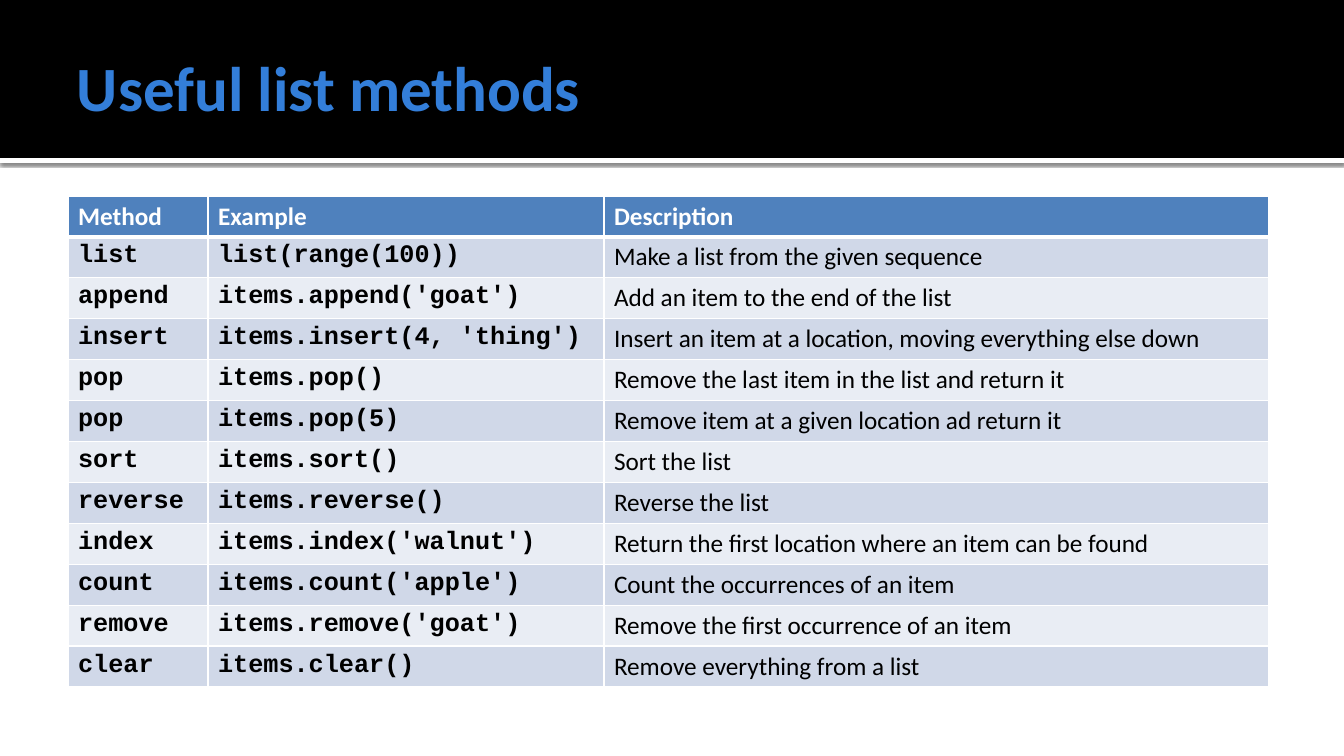
from pptx import Presentation
from pptx.dml.color import RGBColor as RGB
from pptx.enum.shapes import MSO_SHAPE as Shape
from pptx.enum.text import MSO_ANCHOR as Anchor
from pptx.oxml import parse_xml
from pptx.oxml.ns import nsdecls
from pptx.util import Pt

SCALE = 914400 / 100.8
WHITE = RGB(0xFF, 0xFF, 0xFF)
BLACK = RGB(0, 0, 0)
TITLE = RGB(0x33, 0x7E, 0xD9)
HEAD = RGB(0x4F, 0x81, 0xBD)
BANDS = RGB(0xE9, 0xED, 0xF4), RGB(0xD0, 0xD8, 0xE8)
SANS, MONO = "Calibri", "Courier New"
COLS = 140, 396, 665
ROWS = [
    ("Method", "Example", "Description"),
    ("list", "list(range(100))", "Make a list from the given sequence"),
    ("append", "items.append('goat')", "Add an item to the end of the list"),
    ("insert", "items.insert(4, 'thing')",
     "Insert an item at a location, moving everything else down"),
    ("pop", "items.pop()", "Remove the last item in the list and return it"),
    ("pop", "items.pop(5)", "Remove item at a given location ad return it"),
    ("sort", "items.sort()", "Sort the list"),
    ("reverse", "items.reverse()", "Reverse the list"),
    ("index", "items.index('walnut')",
     "Return the first location where an item can be found"),
    ("count", "items.count('apple')", "Count the occurrences of an item"),
    ("remove", "items.remove('goat')", "Remove the first occurrence of an item"),
    ("clear", "items.clear()", "Remove everything from a list"),
]


def px(n):
    """Turn pixels into EMU."""
    return round(n * SCALE)


def add_run(para, text, size, font, color, bold):
    """Add one styled run."""
    run = para.add_run()
    run.text = text
    run.font.size = Pt(size)
    run.font.name = font
    run.font.color.rgb = color
    run.font.bold = bold


def add_bar(slide, x, y, w, h, color):
    """Add a plain filled bar."""
    bar = slide.shapes.add_shape(Shape.RECTANGLE, px(x), px(y), px(w), px(h))
    bar.shadow.inherit = False
    bar.fill.solid()
    bar.fill.fore_color.rgb = color
    bar.line.fill.background()
    return bar


def add_shade(bar):
    """Give a bar a soft shadow below it."""
    bar.element.spPr.find(".//{*}effectLst").append(parse_xml(
        f'<a:outerShdw {nsdecls("a")} blurRad="{Pt(2.5)}" dist="{Pt(0.8)}" '
        f'dir="5400000" algn="t" rotWithShape="0"><a:srgbClr val="{BLACK}">'
        '<a:alpha val="60000"/></a:srgbClr></a:outerShdw>'))


def add_header(slide, x, y, w, h):
    """Add the dark header with its rule and title."""
    add_shade(add_bar(slide, x, y + h, w, 5, WHITE))
    add_bar(slide, x, y, w, h, BLACK)
    box = slide.shapes.add_textbox(px(x + 67), px(y + 17), px(w - 134), px(138))
    frame = box.text_frame
    frame.word_wrap = True
    frame.vertical_anchor = Anchor.MIDDLE
    frame.margin_left = px(10)
    frame.margin_right = frame.margin_top = frame.margin_bottom = px(5)
    add_run(frame.paragraphs[0], "Useful list methods", 45, SANS, TITLE, True)


def add_edges(cell, top, bottom):
    """Draw white borders round a cell."""
    props = cell._tc.get_or_add_tcPr()
    for i, (side, width) in enumerate(zip("LRTB", (1, 1, top, bottom))):
        props.insert(i, parse_xml(
            f'<a:ln{side} {nsdecls("a")} w="{Pt(width)}"><a:solidFill>'
            f'<a:srgbClr val="{WHITE}"/></a:solidFill></a:ln{side}>'))


def add_grid(slide, x, y, w, h):
    """Add the table of list methods."""
    grid = slide.shapes.add_table(
        len(ROWS), len(COLS), px(x), px(y), px(w), px(h)).table
    for col, width in zip(grid.columns, COLS):
        col.width = px(w * width / sum(COLS))
    for r, row in enumerate(ROWS):
        grid.rows[r].height = px(h / len(ROWS))
        for c, text in enumerate(row):
            cell = grid.cell(r, c)
            cell.fill.solid()
            cell.fill.fore_color.rgb = BANDS[r % 2] if r else HEAD
            add_edges(cell, 3 if r == 1 else 1, 1 if r else 3)
            add_run(cell.text_frame.paragraphs[0], text, 18,
                    MONO if r and c < 2 else SANS,
                    BLACK if r else WHITE, r == 0 or c < 2)


def main():
    """Build and save the slide."""
    deck = Presentation()
    deck.slide_width, deck.slide_height = px(1344), px(756)
    slide = deck.slides.add_slide(deck.slide_layouts[6])
    add_header(slide, 0, 0, 1344, 158)
    add_grid(slide, 68, 196, 1201, 491)
    deck.save("out.pptx")


if __name__ == "__main__":
    main()
